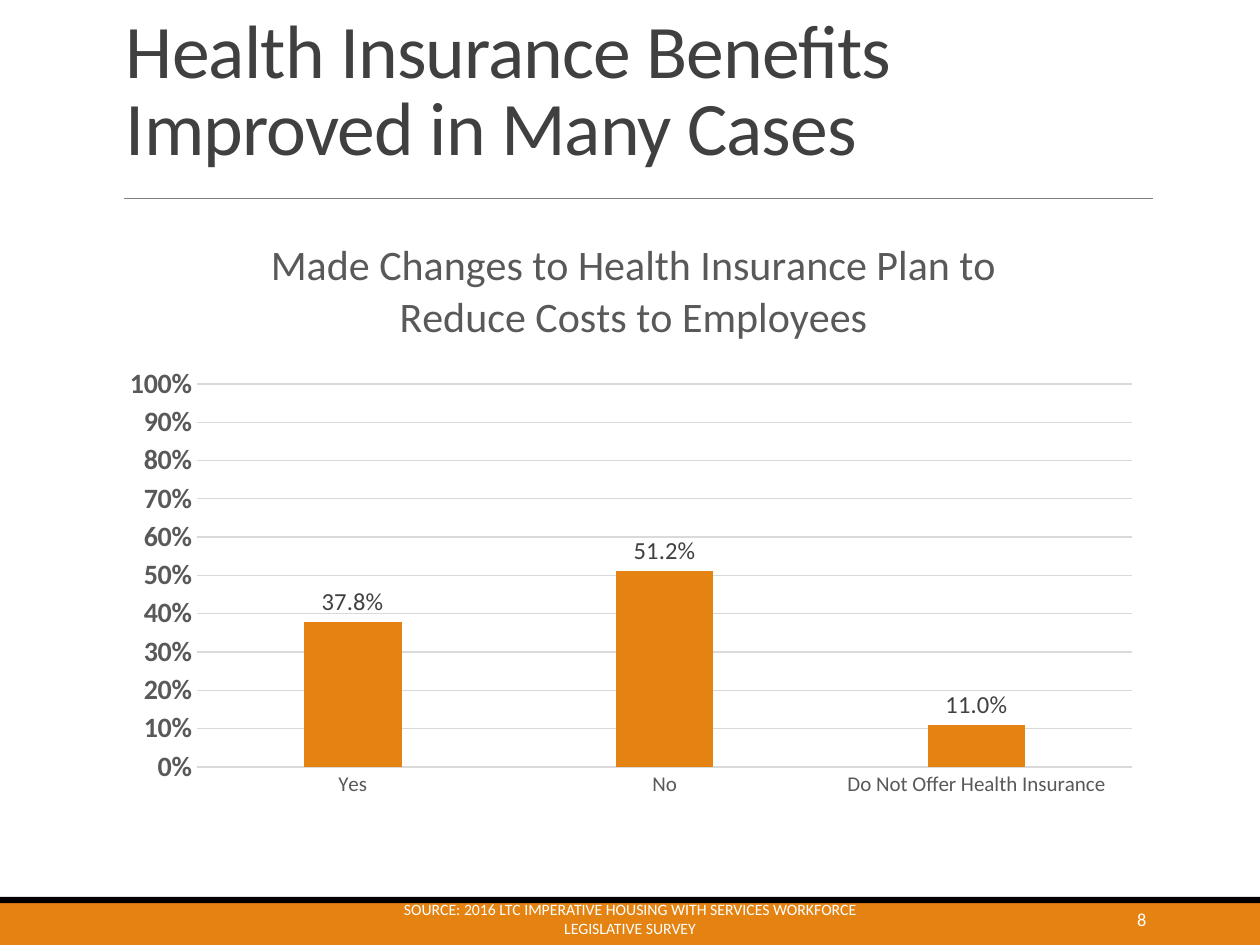
"""Build the slide on changes to health insurance benefits."""
from lxml import etree
from pptx import Presentation
from pptx.chart.data import CategoryChartData
from pptx.dml.color import RGBColor
from pptx.enum.chart import XL_CHART_TYPE, XL_LABEL_POSITION, XL_TICK_MARK
from pptx.enum.shapes import MSO_CONNECTOR, MSO_SHAPE
from pptx.enum.text import MSO_ANCHOR, PP_ALIGN
from pptx.oxml.ns import qn
from pptx.util import Cm, Pt

ORANGE = RGBColor(0xE4, 0x83, 0x12)
BLACK = RGBColor(0, 0, 0)
WHITE = RGBColor(0xFF, 0xFF, 0xFF)
DARK = RGBColor(0x40, 0x40, 0x40)
TEXT_GREY = RGBColor(0x59, 0x59, 0x59)
RULE_GREY = RGBColor(0x80, 0x80, 0x80)
GRID_GREY = RGBColor(0xD9, 0xD9, 0xD9)
LEFT, CENTER, RIGHT = PP_ALIGN.LEFT, PP_ALIGN.CENTER, PP_ALIGN.RIGHT
MIDDLE, BOTTOM = MSO_ANCHOR.MIDDLE, MSO_ANCHOR.BOTTOM
COLUMN = XL_CHART_TYPE.COLUMN_CLUSTERED
OUTSIDE_END = XL_LABEL_POSITION.OUTSIDE_END
NO_TICK = XL_TICK_MARK.NONE
RECT, STRAIGHT = MSO_SHAPE.RECTANGLE, MSO_CONNECTOR.STRAIGHT


class Deck:
    """Hold the style and the current slide."""

    font = "Calibri"

    def __init__(self, width, height):
        self.prs = Presentation()
        self.prs.slide_width, self.prs.slide_height = Cm(width), Cm(height)
        self.s = self.prs.slides.add_slide(self.prs.slide_layouts[6])

    def style(self, font, size, color, bold=False):
        font.name, font.size, font.bold = self.font, Pt(size), bold
        font.color.rgb = color

    def bar(self, x, y, w, h, color):
        sp = self.s.shapes.add_shape(RECT, Cm(x), Cm(y), Cm(w), Cm(h))
        sp.shadow.inherit = False
        sp.fill.solid()
        sp.fill.fore_color.rgb = color
        sp.line.fill.background()

    def rule(self, x1, x2, y, color, width):
        line = self.s.shapes.add_connector(STRAIGHT, Cm(x1), Cm(y), Cm(x2), Cm(y))
        line.line.color.rgb, line.line.width = color, Pt(width)
        etree.SubElement(line._element.spPr, qn("a:effectLst"))

    def text(self, x, y, w, h, text, size, color, align=LEFT, anchor=MIDDLE,
             line_spacing=None, tracking=None):
        tf = self.s.shapes.add_textbox(Cm(x), Cm(y), Cm(w), Cm(h)).text_frame
        tf.word_wrap, tf.vertical_anchor = True, anchor
        tf.text = text
        p = tf.paragraphs[0]
        p.alignment, p.line_spacing = align, line_spacing
        r = p.runs[0]
        self.style(r.font, size, color)
        if tracking is not None:
            r.font._element.set("spc", str(tracking))

    def column_chart(self, x, y, w, h, title, values, layout):
        data = CategoryChartData(number_format="0.0%")
        data.categories = list(values)
        data.add_series("Series 1", list(values.values()))
        chart = self.s.shapes.add_chart(COLUMN, Cm(x), Cm(y), Cm(w), Cm(h), data).chart
        self.style(chart.font, 10, BLACK)
        chart.has_legend = False
        chart.has_title = True
        tf = chart.chart_title.text_frame
        tf.text = title
        self.style(tf.paragraphs[0].runs[0].font, 24, TEXT_GREY)
        chart.chart_title.include_in_layout = False

        cat, val = chart.category_axis, chart.value_axis
        for axis, size, bold in ((cat, 12, False), (val, 16, True)):
            axis.major_tick_mark = axis.minor_tick_mark = NO_TICK
            self.style(axis.tick_labels.font, size, TEXT_GREY, bold)
        val.minimum_scale, val.maximum_scale, val.major_unit = 0, 1, 0.1
        val.tick_labels.number_format = "0%"
        val.tick_labels.number_format_is_linked = False
        val.format.line.fill.background()
        for line in (cat.format.line, val.major_gridlines.format.line):
            line.color.rgb, line.width = GRID_GREY, Pt(0.75)

        plot = chart.plots[0]
        plot.gap_width, plot.overlap, plot.vary_by_categories = 219, -27, False
        fill = plot.series[0].format.fill
        fill.solid()
        fill.fore_color.rgb = ORANGE
        plot.has_data_labels = True
        labels = plot.data_labels
        labels.show_value, labels.position = True, OUTSIDE_END
        labels.number_format, labels.number_format_is_linked = "0.0%", False
        self.style(labels.font, 14, DARK)
        self.place_plot(chart, layout)

    def place_plot(self, chart, layout):
        area = chart._chartSpace.chart.plotArea
        for old in area.findall(qn("c:layout")):
            area.remove(old)
        node = etree.Element(qn("c:layout"))
        manual = etree.SubElement(node, qn("c:manualLayout"))
        settings = [("layoutTarget", "inner"), ("xMode", "edge"), ("yMode", "edge")]
        for tag, value in settings + list(zip("xywh", layout)):
            etree.SubElement(manual, qn("c:" + tag)).set("val", str(value))
        area.insert(0, node)


def main():
    deck = Deck(25.4, 19.05)
    deck.bar(0, 18.11, 25.4, 0.94, ORANGE)
    deck.bar(0, 18.08, 25.4, 0.13, BLACK)
    deck.rule(2.49, 23.24, 4.01, RULE_GREY, 0.5)
    deck.text(2.29, 0.79, 20.96, 2.79, "Health Insurance Benefits Improved in Many Cases",
              43.2, DARK, anchor=BOTTOM, line_spacing=0.85, tracking=-50)
    deck.column_chart(2.29, 4.24, 20.96, 12.07,
                      "Made Changes to Health Insurance Plan to Reduce Costs to Employees",
                      {"Yes": 0.378, "No": 0.512, "Do Not Offer Health Insurance": 0.11},
                      (0.08, 0.29, 0.9, 0.64))
    deck.text(20.62, 18.11, 2.74, 0.84, "8", 10.5, WHITE, RIGHT)
    deck.text(7.67, 18.11, 10.06, 0.84,
              "SOURCE: 2016 LTC IMPERATIVE HOUSING WITH SERVICES WORKFORCE LEGISLATIVE SURVEY",
              9, WHITE, CENTER)
    deck.prs.save("out.pptx")


if __name__ == "__main__":
    main()
